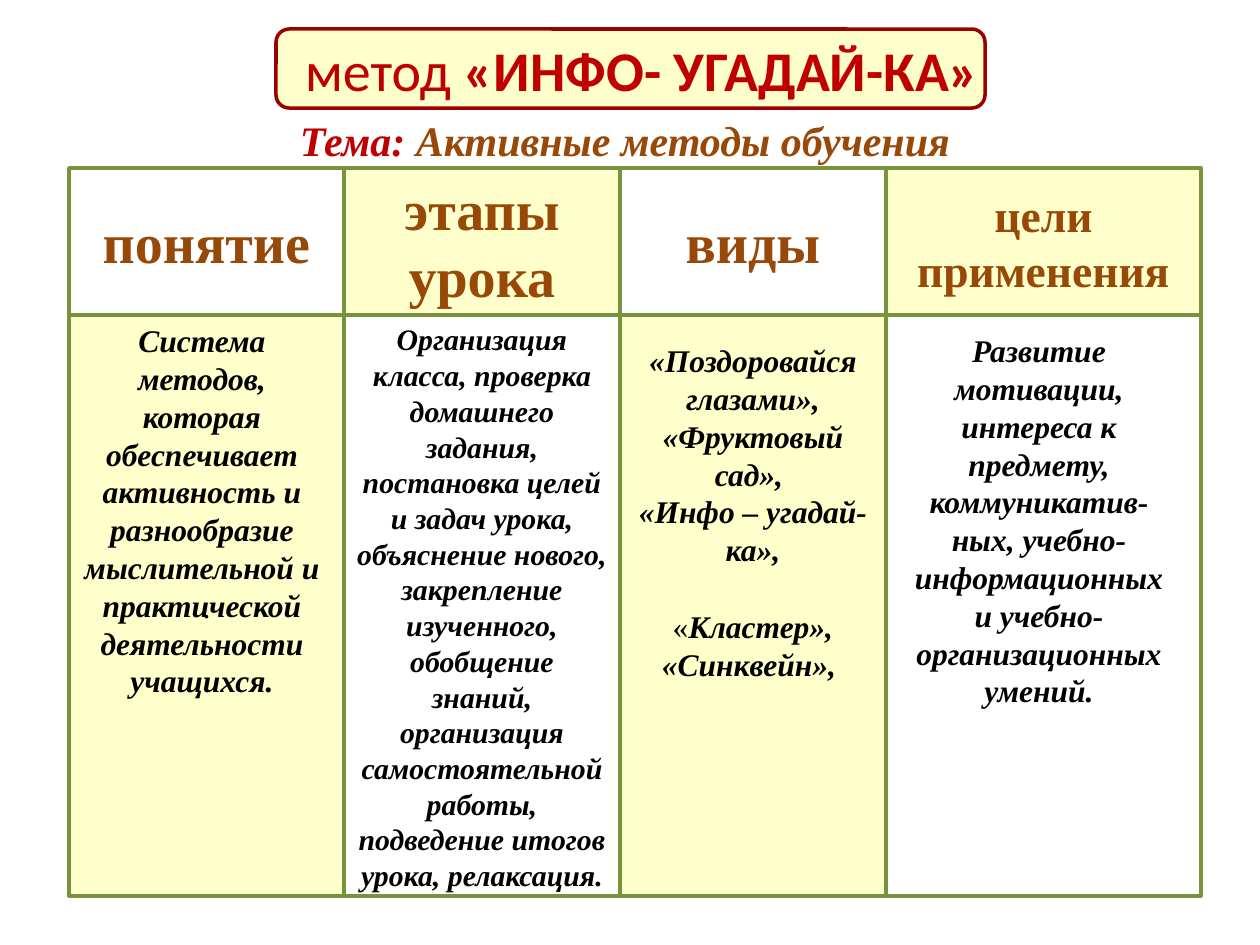
import pptx
import pptx.util
import pptx.dml.color
import pptx.enum.shapes
import pptx.enum.text

RGB = pptx.dml.color.RGBColor
KIND = pptx.enum.shapes.MSO_SHAPE
ALIGN = pptx.enum.text.PP_ALIGN
ANCHOR = pptx.enum.text.MSO_ANCHOR

CREAM = RGB(0xFF, 0xFF, 0xCC)
WHITE = RGB(0xFF, 0xFF, 0xFF)
BLACK = RGB(0, 0, 0)
RED = RGB(0xC0, 0, 0)
DARK = RGB(0x99, 0, 0)
BROWN = RGB(0x98, 0x48, 0x07)
GREEN = RGB(0x77, 0x93, 0x3C)
SERIF = "Times New Roman"

HEAD = {"name": SERIF, "size": 32, "bold": True, "color": BROWN}
PLAIN = {"name": SERIF, "size": 18, "color": BLACK}
BODY = PLAIN | {"bold": True, "italic": True}
THEME = BODY | {"size": 24, "color": RED}
TITLE = {"name": "Calibri", "size": 32, "bold": False, "color": RED}

COLS = [69, 344, 620, 886, 1201]
ROWS = [168, 315, 896]
HEADS = [
    (["понятие"], 32),
    (["этапы", "урока"], 32),
    (["виды"], 32),
    (["цели применения"], 26),
]


def px(n):
    return pptx.util.Emu(round(n * 914400 / 126))


def style(font, form):
    for key, val in form.items():
        if key == "color":
            font.color.rgb = val
        else:
            setattr(font, key, pptx.util.Pt(val) if key == "size" else val)


def write(frame, paras, anchor=ANCHOR.TOP):
    """Fill a frame; each paragraph is a list of (text, format) runs."""
    frame.word_wrap = True
    frame.auto_size = pptx.enum.text.MSO_AUTO_SIZE.NONE
    frame.vertical_anchor = anchor
    for i, runs in enumerate(paras):
        para = frame.paragraphs[0] if i == 0 else frame.add_paragraph()
        para.alignment = ALIGN.CENTER
        for text, form in runs:
            run = para.add_run()
            run.text = text
            style(run.font, form)


def lines(texts, form):
    return [[(text, form)] for text in texts]


def block(slide, box, fill, line=None, kind=KIND.RECTANGLE):
    shape = slide.shapes.add_shape(kind, *map(px, box))
    shape.shadow.inherit = False
    shape.fill.solid()
    shape.fill.fore_color.rgb = fill
    if line is None:
        shape.line.fill.background()
    else:
        shape.line.color.rgb = line
        shape.line.width = pptx.util.Pt(2)
    return shape


def label(slide, box, paras):
    write(slide.shapes.add_textbox(*map(px, box)).text_frame, paras)


def banner(slide, box):
    x, y, w, h = box
    plate = block(slide, (x + 227, y + 9, 709, 79), CREAM, DARK,
                  KIND.ROUNDED_RECTANGLE)
    title = slide.shapes.title
    title.left, title.top, title.width, title.height = map(px, box)
    write(title.text_frame,
          [[("метод", TITLE), (" «ИНФО- УГАДАЙ-КА»", TITLE | {"bold": True})]],
          ANCHOR.MIDDLE)
    title._element.addprevious(plate._element)
    label(slide, (x + 168, y + h - 10, 816, 64),
          [[("Тема: ", THEME),
            ("Активные методы обучения", THEME | {"color": BROWN})]])


def grid(slide):
    """Draw the chequered cells and the heading row."""
    for c, (x, right) in enumerate(zip(COLS, COLS[1:])):
        for r, (y, low) in enumerate(zip(ROWS, ROWS[1:])):
            fill = CREAM if (r + c) % 2 else WHITE
            cell = block(slide, (x, y, right - x, low - y), fill, GREEN)
            if r == 0:
                texts, size = HEADS[c]
                write(cell.text_frame, lines(texts, HEAD | {"size": size}),
                      ANCHOR.MIDDLE)
            elif c == 0:
                write(cell.text_frame, lines(["."], PLAIN), ANCHOR.MIDDLE)


def notion(slide, x, y):
    label(slide, (x, y, 266, 404), lines([
        "Система методов, которая обеспечивает активность и разнообразие "
        "мыслительной и практической деятельности учащихся."], BODY))


def stages(slide, x, y):
    label(slide, (x, y, 276, 590), lines([
        "Организация класса, проверка домашнего задания, постановка целей "
        "и задач урока, объяснение нового, закрепление изученного, "
        "обобщение знаний, организация самостоятельной работы, подведение "
        "итогов урока, релаксация."], BODY | {"size": 17}))


def kinds(slide, x, y):
    label(slide, (x, y + 20, 266, 242), lines([
        "«Поздоровайся глазами», «Фруктовый сад», ",
        "«Инфо – угадай-ка»,"], BODY))
    label(slide, (x, y + 286, 266, 89),
          [[("«", PLAIN), ("Кластер», «Синквейн», ", BODY)]])


def goals(slide, x, y):
    panel = block(slide, (x + 10, y + 10, 286, 394), WHITE)
    write(panel.text_frame, lines([
        "Развитие мотивации, интереса к предмету, коммуникатив-",
        "ных, учебно-информационных и учебно-организационных умений."], BODY))


def main():
    deck = pptx.Presentation()
    deck.slide_width, deck.slide_height = px(1260), px(945)
    slide = deck.slides.add_slide(deck.slide_layouts[5])
    banner(slide, (49, 20, 1187, 98))
    grid(slide)
    for fill, x in zip((notion, stages, kinds, goals), COLS):
        fill(slide, x, ROWS[1])
    deck.save("out.pptx")


if __name__ == "__main__":
    main()
